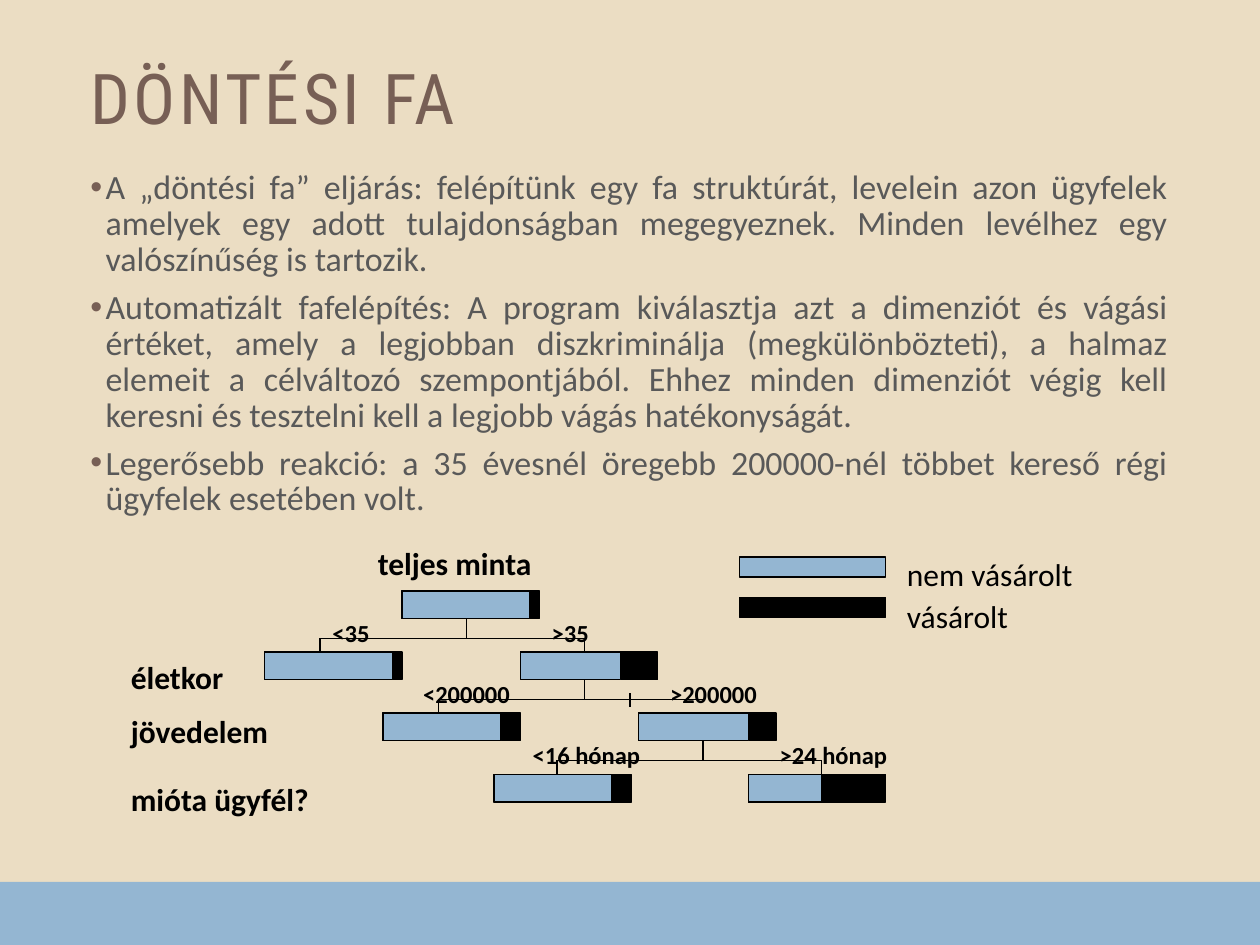
import math

import lxml.etree
import pptx
import pptx.dml.color
import pptx.enum.shapes
import pptx.enum.text
import pptx.oxml.ns
import pptx.util

Inches, Pt = pptx.util.Inches, pptx.util.Pt
RGBColor = pptx.dml.color.RGBColor
qn = pptx.oxml.ns.qn
PP_ALIGN = pptx.enum.text.PP_ALIGN
ANCHOR = pptx.enum.text.MSO_ANCHOR

SAND = RGBColor(0xEB, 0xDD, 0xC3)
BROWN = RGBColor(0x77, 0x5F, 0x55)
BLUE = RGBColor(0x94, 0xB6, 0xD2)
GREY = RGBColor(0x59, 0x59, 0x59)
BLACK = RGBColor(0, 0, 0)

WIDTH, HEIGHT = 10, 7.5
MARGIN = 0.62

# Content
TITLE = "DÖNTÉSI FA"
POINTS = [
    "A „döntési fa” eljárás: felépítünk egy fa struktúrát, levelein azon ügyfelek "
    "amelyek egy adott tulajdonságban megegyeznek. Minden levélhez egy valószínűség "
    "is tartozik.",
    "Automatizált fafelépítés: A program kiválasztja azt a dimenziót és vágási "
    "értéket, amely a legjobban diszkriminálja (megkülönbözteti), a halmaz elemeit "
    "a célváltozó szempontjából. Ehhez minden dimenziót végig kell keresni és "
    "tesztelni kell a legjobb vágás hatékonyságát.",
    "Legerősebb reakció: a 35 évesnél öregebb 200000-nél többet kereső régi "
    "ügyfelek esetében volt.",
]
# Tree bars: row, left, share that did not buy
BARS = [(0, 3.19, 0.93), (1, 2.1, 0.93), (1, 4.13, 0.73), (2, 3.04, 0.86),
        (2, 5.07, 0.8), (3, 3.92, 0.86), (3, 5.94, 0.53)]
# Row headings: text, left, top
HEADINGS = [("teljes minta", 2.9, 4.27), ("életkor", 0.94, 5.17),
            ("jövedelem", 0.94, 5.6), ("mióta ügyfél?", 0.94, 6.14)]
# Splits from one row to the next: (text, left) of both labels, then right tick x and top offset
SPLITS = [
    (("<35", 2.54), (">35", 4.28), 4.64, 0),
    (("<200000", 3.26), (">200000", 5.22), 5.0, -0.05),
    (("<16 hónap", 4.13), (">24 hónap", 6.09), 6.52, 0),
]
# Legend: text, colour, bar top, text top
LEGEND = [("nem vásárolt", BLUE, 4.42, 4.36), ("vásárolt", BLACK, 4.74, 4.69)]

# Tree grid
TREE_TOP, ROW_STEP = 4.69, 0.485
BAR_WIDTH, BAR_HEIGHT = 1.09, 0.22
BRANCH_LEFT, BRANCH_STEP, BRANCH_SPAN, STEM_OFFSET = 2.54, 0.94, 2.1, 1.16
LABEL_WIDTH = 1.96

# Wave along the bottom
WAVE_MIDDLE, WAVE_HEIGHT, WAVE_PERIOD = 6.665, 0.095, 1.122

presentation = pptx.Presentation()
presentation.slide_width, presentation.slide_height = Inches(WIDTH), Inches(HEIGHT)
slide = presentation.slides.add_slide(presentation.slide_layouts[6])
slide.background.fill.solid()
slide.background.fill.fore_color.rgb = SAND


def add_text(texts, left, top, width, height, *, size, color=BLACK, bold=False,
             font="Calibri", align=PP_ALIGN.LEFT, anchor=ANCHOR.TOP,
             line_spacing=1.0, space_before=0, letter_spacing=0, bullet=None):
    box = slide.shapes.add_textbox(Inches(left), Inches(top), Inches(width), Inches(height))
    frame = box.text_frame
    frame.word_wrap = True
    frame.vertical_anchor = anchor
    for index, text in enumerate(texts):
        paragraph = frame.paragraphs[0] if index == 0 else frame.add_paragraph()
        paragraph.alignment = align
        paragraph.line_spacing = line_spacing
        paragraph.space_before = Pt(space_before)
        run = paragraph.add_run()
        run.text = text
        run.font.name, run.font.size, run.font.bold = font, Pt(size), bold
        run.font.color.rgb = color
        if letter_spacing:
            run.font._element.set("spc", str(letter_spacing * 100))
        if bullet:
            properties = paragraph._p.get_or_add_pPr()
            properties.set("marL", str(Inches(0.12)))
            properties.set("indent", str(-Inches(0.12)))
            bullet_color = lxml.etree.SubElement(properties, qn("a:buClr"))
            lxml.etree.SubElement(bullet_color, qn("a:srgbClr")).set("val", str(bullet))
            lxml.etree.SubElement(properties, qn("a:buFont")).set("typeface", "Arial")
            lxml.etree.SubElement(properties, qn("a:buChar")).set("char", "•")


def add_bar(left, top, width, height, color):
    bar = slide.shapes.add_shape(pptx.enum.shapes.MSO_SHAPE.RECTANGLE, Inches(left),
                                 Inches(top), Inches(width), Inches(height))
    bar.shadow.inherit = False
    bar.fill.solid()
    bar.fill.fore_color.rgb = color
    bar.line.color.rgb = BLACK
    bar.line.width = Pt(0.75)


def add_line(x1, y1, x2, y2):
    line = slide.shapes.add_connector(pptx.enum.shapes.MSO_CONNECTOR.STRAIGHT,
                                      Inches(x1), Inches(y1), Inches(x2), Inches(y2))
    line.line.color.rgb = BLACK
    line.line.width = Pt(0.75)
    lxml.etree.SubElement(line._element.spPr, qn("a:effectLst"))


def add_wave():
    steps = 200
    points = []
    for step in range(steps + 1):
        x = WIDTH * step / steps
        phase = 2 * math.pi * (x - WIDTH / 2) / WAVE_PERIOD
        points.append((x, WAVE_MIDDLE - WAVE_HEIGHT * math.cos(phase)))
    points += [(WIDTH, HEIGHT), (0, HEIGHT)]
    builder = slide.shapes.build_freeform(*points[0], scale=Inches(1))
    builder.add_line_segments(points[1:], close=True)
    wave = builder.convert_to_shape()
    wave.shadow.inherit = False
    wave.fill.solid()
    wave.fill.fore_color.rgb = BLUE
    wave.line.fill.background()


# Title and bullet points
add_text([TITLE], MARGIN, 0.42, WIDTH - 2 * MARGIN, 0.74, size=40, color=BROWN,
         font="Roboto Condensed", anchor=ANCHOR.BOTTOM, line_spacing=0.9, letter_spacing=2)
add_text(POINTS, MARGIN, 1.31, WIDTH - 2 * MARGIN, 2.97, size=19.4, color=GREY,
         align=PP_ALIGN.JUSTIFY, line_spacing=0.88, space_before=7, bullet=BROWN)
add_wave()

# Tree bars: black whole with the blue share on top
for row, left, share in BARS:
    top = TREE_TOP + row * ROW_STEP
    add_bar(left, top, BAR_WIDTH, BAR_HEIGHT, BLACK)
    add_bar(left, top, BAR_WIDTH * share, BAR_HEIGHT, BLUE)
for text, left, top in HEADINGS:
    add_text([text], left, top, LABEL_WIDTH, 0.27, size=18, bold=True)

# Branches and their labels
for index, (*labels, tick_x, tick_offset) in enumerate(SPLITS):
    child_top = TREE_TOP + (index + 1) * ROW_STEP
    branch_y = child_top - 0.11
    left = BRANCH_LEFT + index * BRANCH_STEP
    stem_x = left + STEM_OFFSET
    add_line(left, child_top, left, branch_y)
    add_line(left, branch_y, left + BRANCH_SPAN, branch_y)
    add_line(tick_x, branch_y + tick_offset, tick_x, child_top + tick_offset)
    add_line(stem_x, branch_y, stem_x, branch_y - 0.16)
    for text, label_left in labels:
        add_text([text], label_left, child_top - 0.32, LABEL_WIDTH, 0.23, size=14, bold=True)

# Legend
for text, color, bar_top, text_top in LEGEND:
    add_bar(5.87, bar_top, 1.16, 0.16, color)
    add_text([text], 7.1, text_top, LABEL_WIDTH, 0.27, size=18)

presentation.save("out.pptx")
